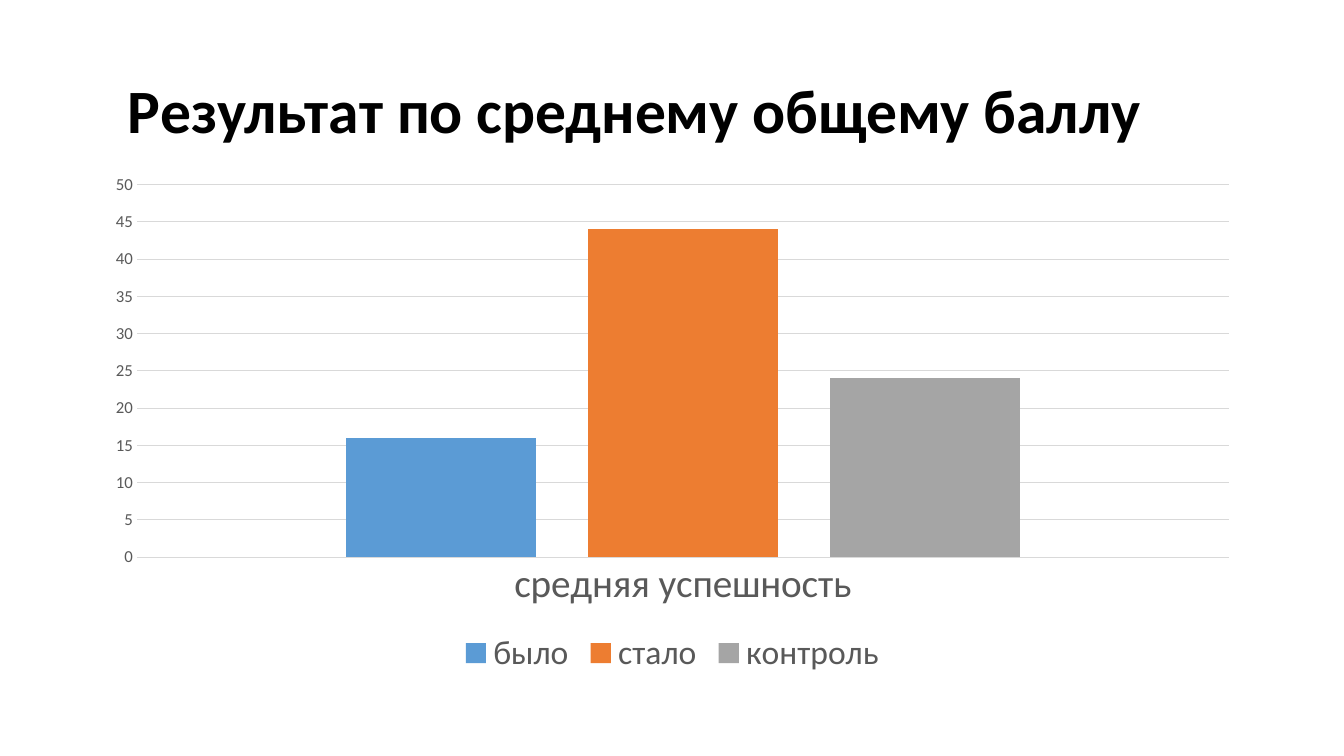
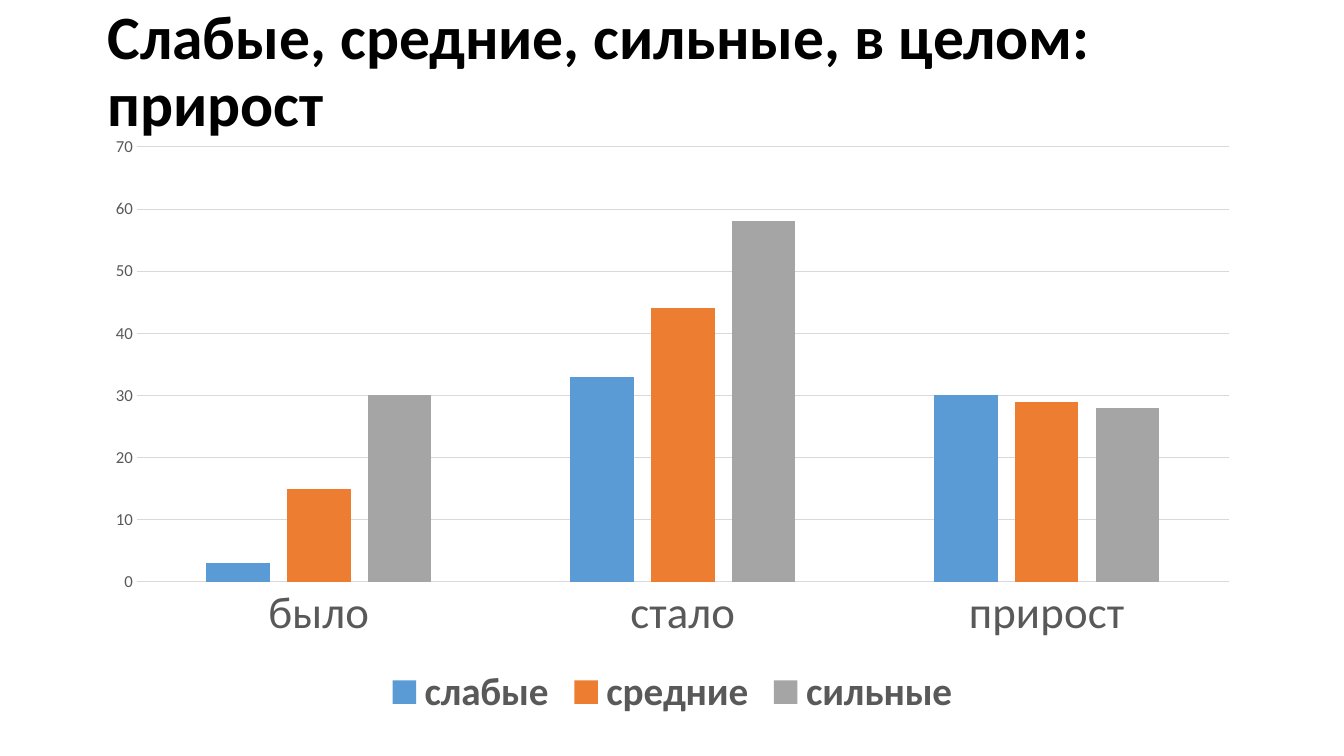
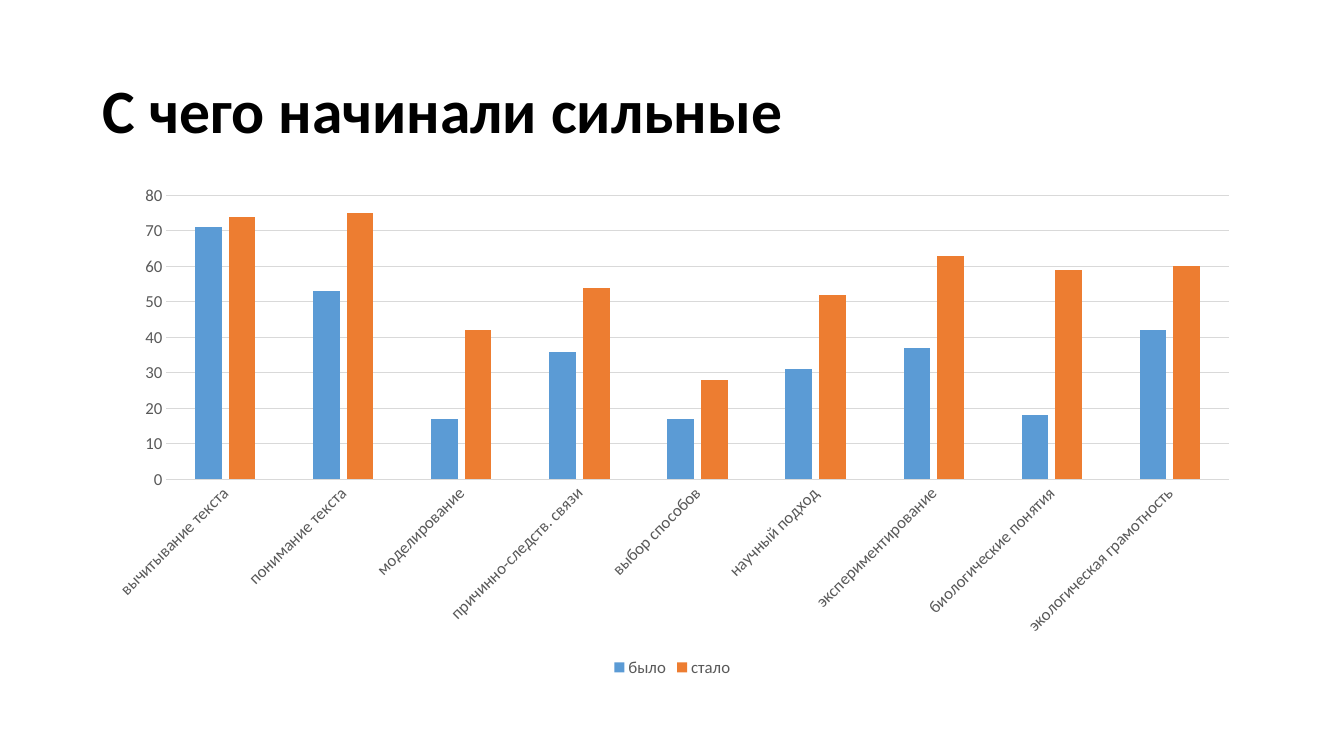
from dataclasses import dataclass

import pptx
import pptx.chart.data
import pptx.dml.color
import pptx.enum.chart
import pptx.enum.text
import pptx.util

Pt = pptx.util.Pt

FONT = "Calibri"
COLORS = {
    "background": "FFFFFF",
    "title": "000000",
    "label": "595959",
    "grid": "D9D9D9",
}
SERIES_COLORS = {"first": "5B9BD5", "second": "ED7D31", "third": "A5A5A5"}
SLIDE_WIDTH, SLIDE_HEIGHT = 960, 540
CHART_LEFT, CHART_WIDTH = 66.25, 828
TITLE_HEIGHT = 104.4


@dataclass(frozen=True)
class ChartSlide:
    title: str
    title_left: float
    title_top: float
    title_width: float
    chart_top: float
    chart_height: float
    categories: tuple[str, ...]
    series: dict[str, tuple[int, ...]]
    axis_maximum: int
    axis_step: int
    category_size: float = 12
    legend_size: float = 12
    legend_bold: bool = False
    label_rotation: int = 0


SLIDES = (
    ChartSlide(
        title="Результат по среднему общему баллу",
        title_left=84.25, title_top=28.75, title_width=828,
        chart_top=117.4, chart_height=368.6,
        categories=("средняя успешность",),
        series={"было": (16,), "стало": (44,), "контроль": (24,)},
        axis_maximum=50, axis_step=5,
        category_size=28, legend_size=24,
    ),
    ChartSlide(
        title="Слабые, средние, сильные, в целом: прирост",
        title_left=69.85, title_top=0, title_width=863.3,
        chart_top=89.3, chart_height=427.7,
        categories=("было", "стало", "прирост"),
        series={
            "слабые": (3, 33, 30),
            "средние": (15, 44, 29),
            "сильные": (30, 58, 28),
        },
        axis_maximum=70, axis_step=10,
        category_size=32, legend_size=28, legend_bold=True,
    ),
    ChartSlide(
        title="С чего начинали сильные",
        title_left=66.25, title_top=28.75, title_width=828,
        chart_top=125.3, chart_height=361.4,
        categories=(
            "вычитывание текста",
            "понимание текста",
            "моделирование",
            "причинно-следств. связи",
            "выбор способов",
            "научный подход",
            "экспериментирование",
            "биологические понятия",
            "экологическая грамотность",
        ),
        series={
            "было": (71, 53, 17, 36, 17, 31, 37, 18, 42),
            "стало": (74, 75, 42, 54, 28, 52, 63, 59, 60),
        },
        axis_maximum=80, axis_step=10,
        label_rotation=-45,
    ),
)


def rgb(value: str) -> pptx.dml.color.RGBColor:
    return pptx.dml.color.RGBColor.from_string(value)


def style_font(font, *, size: float, color: str, bold: bool = False) -> None:
    font.name = FONT
    font.size = Pt(size)
    font.bold = bold
    font.color.rgb = rgb(color)


def style_line(line, color: str) -> None:
    line.color.rgb = rgb(color)
    line.width = Pt(0.75)


def add_text(slide, text: str, *, left: float, top: float, width: float,
             height: float, size: float, color: str, bold: bool = False,
             line_spacing: float = 1.0) -> None:
    shape = slide.shapes.add_textbox(Pt(left), Pt(top), Pt(width), Pt(height))
    frame = shape.text_frame
    frame.word_wrap = True
    frame.vertical_anchor = pptx.enum.text.MSO_ANCHOR.MIDDLE
    paragraph = frame.paragraphs[0]
    paragraph.line_spacing = line_spacing
    run = paragraph.add_run()
    run.text = text
    style_font(run.font, size=size, color=color, bold=bold)


def style_axes(chart, content: ChartSlide) -> None:
    no_tick = pptx.enum.chart.XL_TICK_MARK.NONE
    sizes = ((chart.category_axis, content.category_size), (chart.value_axis, 12))
    for axis, size in sizes:
        axis.major_tick_mark = no_tick
        axis.minor_tick_mark = no_tick
        style_font(axis.tick_labels.font, size=size, color=COLORS["label"])
    style_line(chart.category_axis.format.line, COLORS["grid"])
    if content.label_rotation:
        body = chart.category_axis._element.txPr.bodyPr
        body.set("rot", str(content.label_rotation * 60000))
        body.set("vert", "horz")

    value_axis = chart.value_axis
    value_axis.minimum_scale = 0
    value_axis.maximum_scale = content.axis_maximum
    value_axis.major_unit = content.axis_step
    value_axis.format.line.fill.background()
    value_axis.has_major_gridlines = True
    style_line(value_axis.major_gridlines.format.line, COLORS["grid"])


def add_column_chart(slide, content: ChartSlide) -> None:
    data = pptx.chart.data.CategoryChartData()
    data.categories = content.categories
    for name, values in content.series.items():
        data.add_series(name, values)
    chart = slide.shapes.add_chart(
        pptx.enum.chart.XL_CHART_TYPE.COLUMN_CLUSTERED,
        Pt(CHART_LEFT), Pt(content.chart_top),
        Pt(CHART_WIDTH), Pt(content.chart_height), data,
    ).chart
    chart.has_title = False
    style_font(chart.font, size=10, color=COLORS["title"])
    style_axes(chart, content)

    plot = chart.plots[0]
    plot.vary_by_categories = False
    plot.gap_width = 219
    plot.overlap = -27
    for series, color in zip(plot.series, SERIES_COLORS.values()):
        series.format.fill.solid()
        series.format.fill.fore_color.rgb = rgb(color)

    chart.has_legend = True
    chart.legend.position = pptx.enum.chart.XL_LEGEND_POSITION.BOTTOM
    chart.legend.include_in_layout = False
    style_font(chart.legend.font, size=content.legend_size,
               color=COLORS["label"], bold=content.legend_bold)


def add_chart_slide(presentation, content: ChartSlide) -> None:
    slide = presentation.slides.add_slide(presentation.slide_layouts[6])
    slide.background.fill.solid()
    slide.background.fill.fore_color.rgb = rgb(COLORS["background"])
    add_text(slide, content.title, left=content.title_left,
             top=content.title_top, width=content.title_width,
             height=TITLE_HEIGHT, size=44, color=COLORS["title"],
             bold=True, line_spacing=0.9)
    add_column_chart(slide, content)


def main() -> None:
    presentation = pptx.Presentation()
    presentation.slide_width = Pt(SLIDE_WIDTH)
    presentation.slide_height = Pt(SLIDE_HEIGHT)
    for content in SLIDES:
        add_chart_slide(presentation, content)
    presentation.save("out.pptx")


if __name__ == "__main__":
    main()
